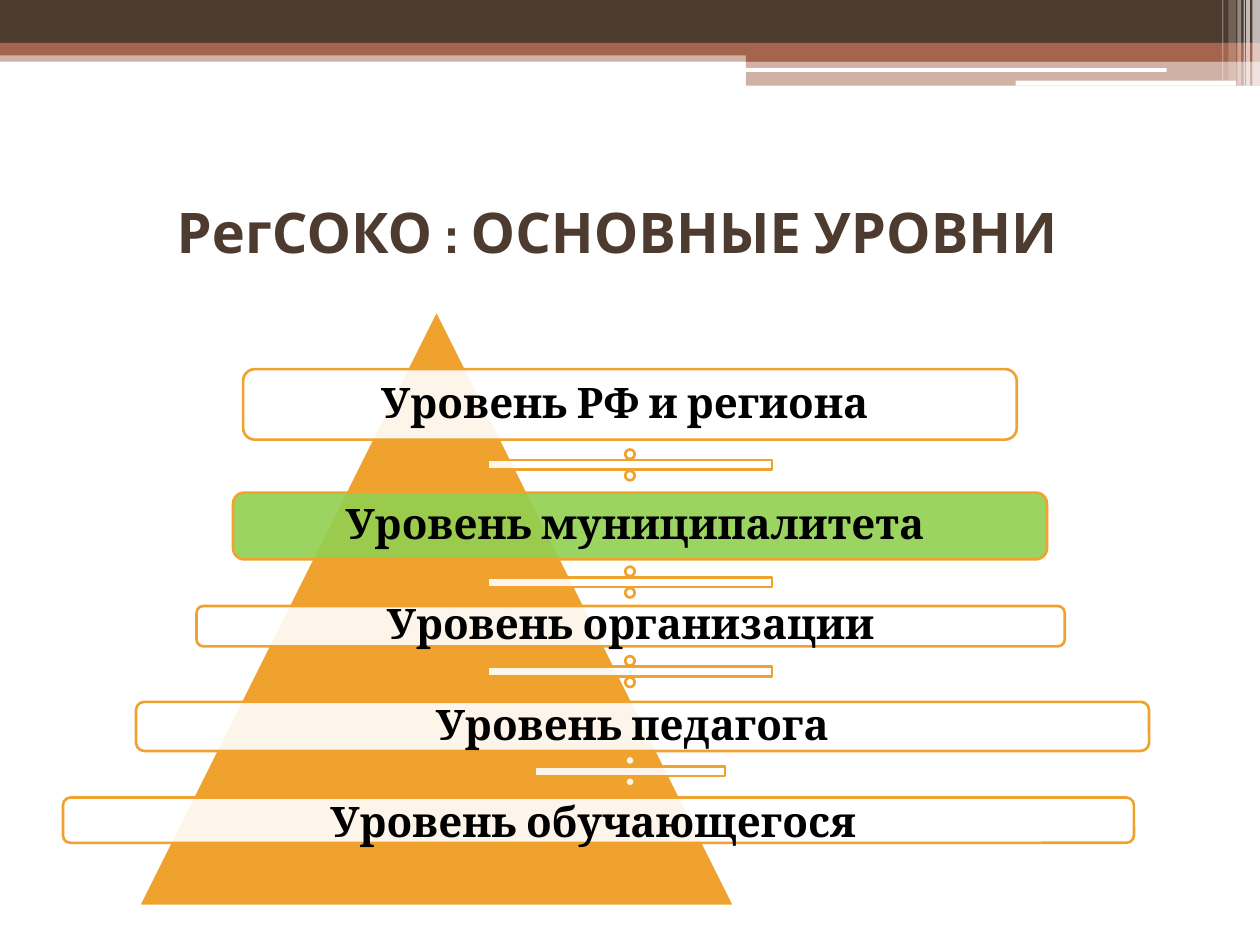
"""Build the slide showing the levels of the assessment system on a pyramid."""
from dataclasses import dataclass

from lxml.etree import SubElement
from pptx import Presentation
from pptx.dml.color import RGBColor
from pptx.enum.shapes import MSO_SHAPE
from pptx.enum.text import MSO_ANCHOR, PP_ALIGN
from pptx.oxml.ns import qn
from pptx.shapes.autoshape import Shape
from pptx.slide import Slide
from pptx.util import Inches, Pt

BROWN, RUST, ORANGE = "4E3B30", "A5644E", "F0A22E"
WHITE, GREEN, BLACK = "FFFFFF", "92D050", "000000"


@dataclass
class Box:
    left: float
    top: float
    width: float
    height: float
    fill: str = WHITE
    opacity: int = 100
    line: str | None = None
    kind: MSO_SHAPE = MSO_SHAPE.RECTANGLE


@dataclass
class Level:
    text: str
    left: float
    top: float
    width: float
    height: float
    fill: str = WHITE
    right_inset: float = 0.18
    line_spacing: float = 0.9


@dataclass
class Divider:
    top: float
    width: float = 3.07


BANDS = [
    Box(0, 0.4, 10, 0.09, RUST, 50),
    Box(0, 0, 10, 0.34, BROWN),
    Box(0, 0.34, 10, 0.1, RUST),
    Box(5.92, 0.39, 4.08, 0.1, RUST),
    Box(5.92, 0.48, 4.08, 0.2, RUST, 50),
    Box(5.91, 0.54, 3.35, 0.03, kind=MSO_SHAPE.ROUNDED_RECTANGLE),
    Box(8.06, 0.64, 1.75, 0.04, kind=MSO_SHAPE.ROUNDED_RECTANGLE),
    Box(9.94, 0, 0.06, 0.68, opacity=65),
    Box(9.89, 0, 0.03, 0.68, opacity=65),
    Box(9.87, 0, 0.01, 0.68, opacity=60),
    Box(9.82, 0, 0.03, 0.68, opacity=40),
    Box(9.75, 0, 0.06, 0.64, opacity=20),
    Box(9.7, 0, 0.01, 0.64, opacity=30),
]
PYRAMID = Box(1.1, 2.46, 4.73, 4.73, ORANGE, line=WHITE, kind=MSO_SHAPE.ISOSCELES_TRIANGLE)
LEVELS = [
    Level("Уровень РФ и региона", 1.93, 2.93, 6.14, 0.56),
    Level("Уровень муниципалитета", 1.85, 3.91, 6.46, 0.53, GREEN),
    Level("Уровень организации", 1.56, 4.81, 6.89, 0.32, right_inset=0.1),
    Level("Уровень педагога", 1.08, 5.57, 8.04, 0.39, right_inset=0.26),
    Level("Уровень обучающегося", 0.5, 6.33, 8.5, 0.36, line_spacing=1.0),
]
DIVIDERS = [Divider(3.53), Divider(4.46), Divider(5.17), Divider(5.96, 2.05)]


def color(value: str) -> RGBColor:
    """Turn a hex string into a colour."""
    return RGBColor.from_string(value)


def set_values(target: object, values: dict[str, object]) -> None:
    """Set every attribute named in a dict of format values."""
    for name, value in values.items():
        setattr(target, name, value)


def draw_box(slide: Slide, box: Box) -> Shape:
    """Draw one filled preset shape."""
    place = [Inches(value) for value in (box.left, box.top, box.width, box.height)]
    shape = slide.shapes.add_shape(box.kind, *place)
    shape.shadow.inherit = False
    shape.fill.solid()
    shape.fill.fore_color.rgb = color(box.fill)
    if box.opacity < 100:
        fill_color = shape.fill._xPr.find(qn("a:solidFill"))[0]
        SubElement(fill_color, qn("a:alpha"), val=str(box.opacity * 1000))
    if box.line:
        shape.line.color.rgb = color(box.line)
        shape.line.width = Pt(1.5)
    else:
        shape.line.fill.background()
    return shape


def write_text(shape: Shape, text: str, font: str, size: int, font_color: str,
               right_inset: float, line_spacing: float) -> None:
    """Write one bold centred line into a shape."""
    frame = shape.text_frame
    set_values(frame, {
        "word_wrap": True, "vertical_anchor": MSO_ANCHOR.MIDDLE,
        "margin_left": Inches(0.1), "margin_right": Inches(right_inset),
        "margin_top": Inches(0.05), "margin_bottom": Inches(0.05),
    })
    paragraph = frame.paragraphs[0]
    set_values(paragraph, {"alignment": PP_ALIGN.CENTER, "line_spacing": line_spacing})
    run = paragraph.add_run()
    run.text = text
    set_values(run.font, {"name": font, "size": Pt(size), "bold": True})
    run.font.color.rgb = color(font_color)


def draw_level(slide: Slide, level: Level) -> None:
    """Draw one labelled level bar."""
    bar = draw_box(slide, Box(level.left, level.top, level.width, level.height,
                              level.fill, 90, ORANGE, MSO_SHAPE.ROUNDED_RECTANGLE))
    write_text(bar, level.text, "Cambria", 24, BLACK, level.right_inset, level.line_spacing)


def draw_divider(slide: Slide, divider: Divider) -> None:
    """Draw one division sign centred on the slide."""
    left = (10 - divider.width) / 2
    draw_box(slide, Box(left, divider.top, divider.width, 0.32,
                        WHITE, 90, ORANGE, MSO_SHAPE.MATH_DIVIDE))


def draw_title(slide: Slide) -> None:
    """Place and write the title."""
    title = slide.shapes.title
    set_values(title, {"left": Inches(0.5), "top": Inches(1.25),
                       "width": Inches(9), "height": Inches(1.17)})
    write_text(title, "РегСОКО : ОСНОВНЫЕ УРОВНИ", "Cabin", 32, BROWN, 0.3, 1.0)


def main() -> None:
    """Build and save the presentation."""
    presentation = Presentation()
    set_values(presentation, {"slide_width": Inches(10), "slide_height": Inches(7.5)})
    slide = presentation.slides.add_slide(presentation.slide_layouts[5])
    for box in [*BANDS, PYRAMID]:
        draw_box(slide, box)
    draw_title(slide)
    for level in LEVELS:
        draw_level(slide, level)
    for divider in DIVIDERS:
        draw_divider(slide, divider)
    presentation.save("out.pptx")


if __name__ == "__main__":
    main()
